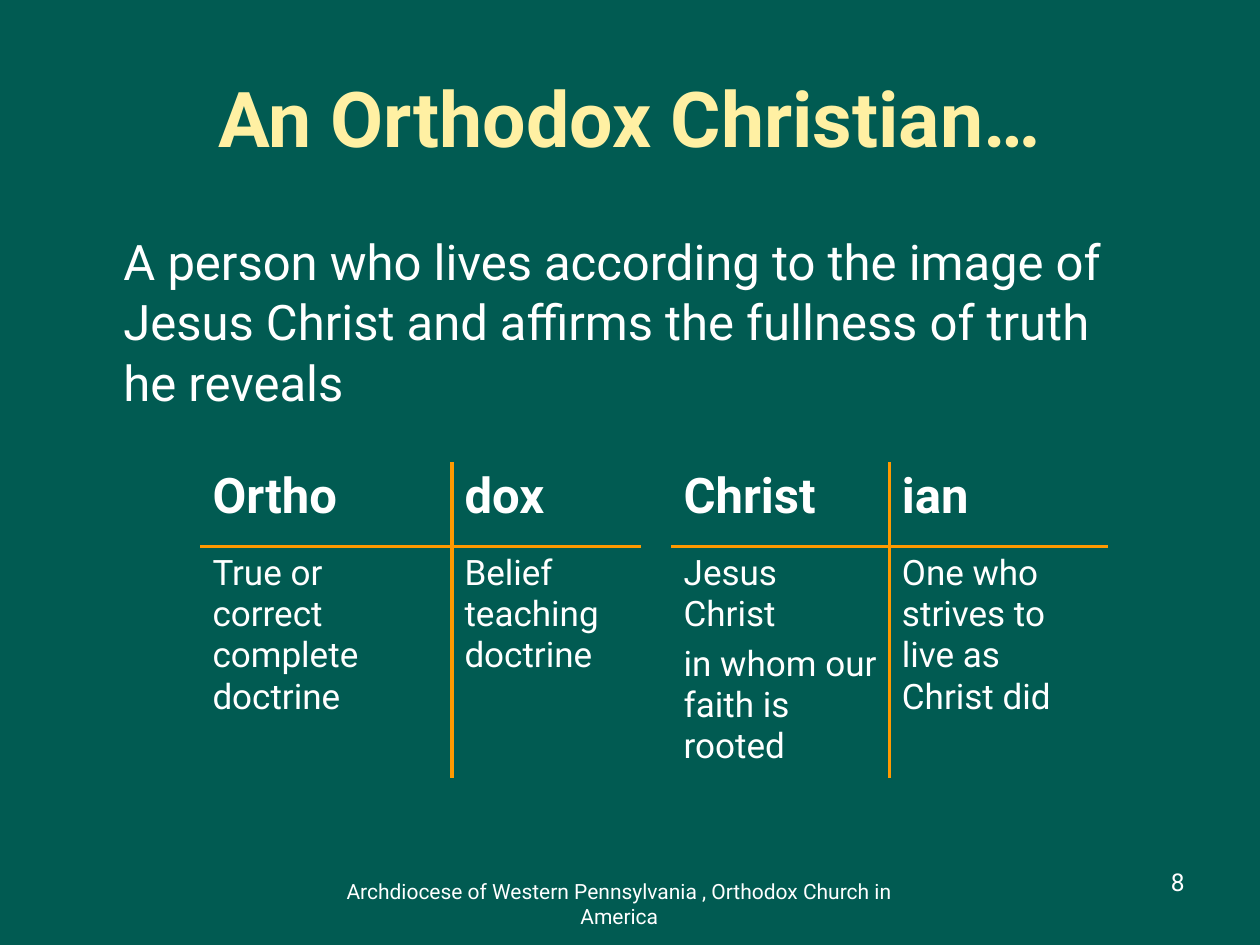
from dataclasses import dataclass

import lxml.etree
import pptx
import pptx.dml.color
import pptx.enum.text
import pptx.oxml.ns
import pptx.util

Cm = pptx.util.Cm
Pt = pptx.util.Pt
Align = pptx.enum.text.PP_ALIGN
Anchor = pptx.enum.text.MSO_ANCHOR


@dataclass(frozen=True)
class Theme:
    font: str = "Roboto"
    background: str = "015B52"
    title: str = "FFF0A3"
    text: str = "FFFFFF"
    rule: str = "FF9900"
    title_size: float = 44
    large_size: float = 28
    cell_size: float = 20
    number_size: float = 14
    footer_size: float = 12
    rule_width: float = 2.25
    paragraph_gap: float = 4.7


THEME = Theme()


@dataclass(frozen=True)
class TextBlock:
    text: str
    left: float
    top: float
    width: float
    height: float
    size: float
    align: Align
    color: str = THEME.text
    bold: bool = False
    anchor: Anchor = Anchor.TOP
    inset_left: float = 0.25
    inset_top: float = 0.13
    line_spacing: float = 1.0


@dataclass(frozen=True)
class Syllable:
    heading: str
    meaning: str
    width: float
    rule_left: bool = False
    rule_right: bool = False


BLOCKS = [
    TextBlock("An Orthodox Christian…", 1.27, 0.76, 22.86, 3.18,
              THEME.title_size, Align.CENTER, THEME.title, True, Anchor.MIDDLE),
    TextBlock("A person who lives according to the image of Jesus Christ "
              "and affirms the fullness of truth he reveals",
              1.27, 4.45, 21.59, 12.57, THEME.large_size, Align.LEFT,
              inset_left=1.22, inset_top=0.18, line_spacing=1.03),
    TextBlock("8", 18.21, 17.35, 5.92, 1.27, THEME.number_size, Align.RIGHT),
    TextBlock("Archdiocese of Western Pennsylvania , Orthodox Church in America",
              5.92, 17.58, 13.13, 1.27, THEME.footer_size, Align.CENTER),
]

SYLLABLES = [
    Syllable("Ortho", "True or correct complete doctrine", 5.08, rule_right=True),
    Syllable("dox", "Belief teaching doctrine", 3.81, rule_left=True),
    Syllable("", "", 0.6),
    Syllable("Christ", "Jesus Christ\nin whom our faith is rooted", 4.4, rule_right=True),
    Syllable("ian", "One who strives to live as Christ did", 4.4, rule_left=True),
]
ROW_HEIGHTS = [1.7, 3.81]


def rgb(color: str) -> pptx.dml.color.RGBColor:
    return pptx.dml.color.RGBColor.from_string(color)


def style_text(frame, size: float, color: str, bold: bool) -> None:
    for para in frame.paragraphs:
        for span in para.runs:
            span.font.name = THEME.font
            span.font.size = Pt(size)
            span.font.bold = bold
            span.font.color.rgb = rgb(color)


def draw_text(page, block: TextBlock) -> None:
    box = page.shapes.add_textbox(Cm(block.left), Cm(block.top),
                                  Cm(block.width), Cm(block.height))
    frame = box.text_frame
    frame.word_wrap = True
    frame.vertical_anchor = block.anchor
    frame.margin_left = Cm(block.inset_left)
    frame.margin_top = Cm(block.inset_top)
    frame.text = block.text
    para = frame.paragraphs[0]
    para.alignment = block.align
    para.line_spacing = block.line_spacing
    style_text(frame, block.size, block.color, block.bold)


def set_border(cell, edge: str, visible: bool) -> None:
    qn = pptx.oxml.ns.qn
    properties = cell._tc.get_or_add_tcPr()
    line = lxml.etree.SubElement(properties, qn(f"a:ln{edge}"),
                                 w=str(Pt(THEME.rule_width)))
    if visible:
        fill = lxml.etree.SubElement(line, qn("a:solidFill"))
        lxml.etree.SubElement(fill, qn("a:srgbClr"), val=THEME.rule)
    else:
        lxml.etree.SubElement(line, qn("a:noFill"))


def fill_cell(cell, syllable: Syllable, is_heading: bool) -> None:
    frame = cell.text_frame
    frame.text = syllable.heading if is_heading else syllable.meaning
    style_text(frame, THEME.large_size if is_heading else THEME.cell_size,
               THEME.text, is_heading)
    for para in frame.paragraphs[1:]:
        para.space_before = Pt(THEME.paragraph_gap)
    has_text = bool(syllable.heading)
    edges = {"L": syllable.rule_left, "R": syllable.rule_right,
             "T": has_text and not is_heading, "B": has_text and is_heading}
    for edge, visible in edges.items():
        set_border(cell, edge, visible)
    cell.fill.background()


def draw_word_table(page, left: float, top: float) -> None:
    total_width = sum(syllable.width for syllable in SYLLABLES)
    table = page.shapes.add_table(len(ROW_HEIGHTS), len(SYLLABLES), Cm(left), Cm(top),
                                  Cm(total_width), Cm(sum(ROW_HEIGHTS))).table
    table.first_row = False
    table.horz_banding = False
    for row, height in zip(table.rows, ROW_HEIGHTS):
        row.height = Cm(height)
    for index, syllable in enumerate(SYLLABLES):
        table.columns[index].width = Cm(syllable.width)
        for row_index in range(len(ROW_HEIGHTS)):
            fill_cell(table.cell(row_index, index), syllable, row_index == 0)


def main() -> None:
    deck = pptx.Presentation()
    deck.slide_width = Cm(25.4)
    deck.slide_height = Cm(19.05)
    page = deck.slides.add_slide(deck.slide_layouts[6])
    page.background.fill.solid()
    page.background.fill.fore_color.rgb = rgb(THEME.background)
    for block in BLOCKS:
        draw_text(page, block)
    draw_word_table(page, 4.03, 9.32)
    deck.save("out.pptx")


if __name__ == "__main__":
    main()
